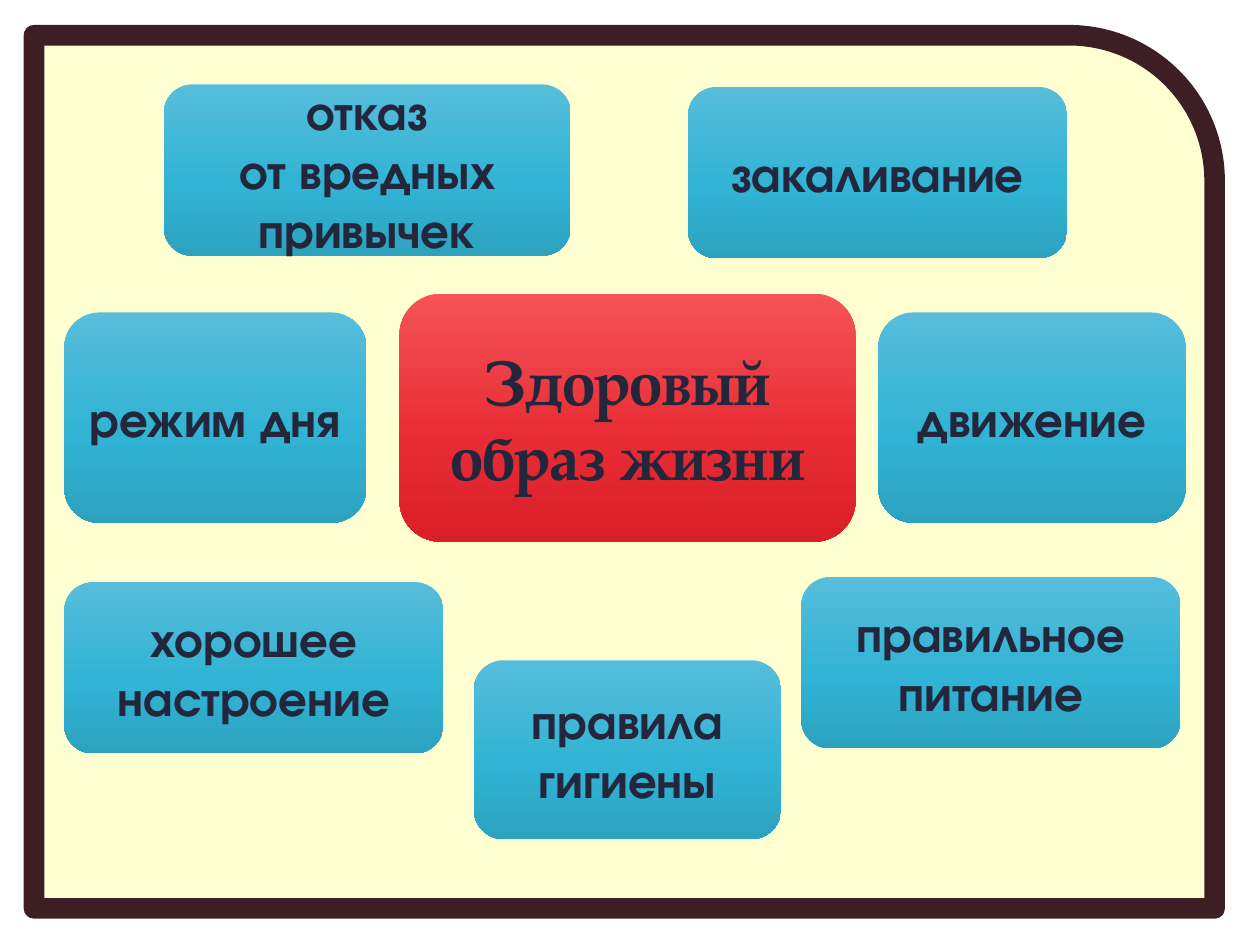
"""Build a slide of healthy lifestyle habits around a central theme."""
from copy import deepcopy

from lxml.etree import SubElement
from pptx import Presentation
from pptx.dml.color import RGBColor
from pptx.enum.shapes import MSO_SHAPE
from pptx.enum.text import MSO_ANCHOR, PP_ALIGN
from pptx.oxml.ns import qn
from pptx.util import Inches, Pt

FRAME = (0.27, 0.28, 9.37, 6.93)
RED = ((0, "F55357"), (0.6, "E72B34"), (1, "DA1F28"))
BLUE = ((0, "57BDDB"), (0.6, "30B3D4"), (1, "2DA2BF"))
THEME_FONT = {"name": "TeX Gyre Pagella", "size": Pt(36), "bold": True}
HABIT_FONT = {"name": "TeX Gyre Adventor", "size": Pt(28), "bold": True}
THEME = ("Здоровый образ жизни", (3.17, 2.33, 3.62, 1.97))
HABITS = [
    ("отказ\nот вредных\nпривычек", (1.3, 0.67, 3.23, 1.36)),
    ("закаливание", (5.46, 0.69, 3.01, 1.36)),
    ("движение", (6.97, 2.48, 2.44, 1.67)),
    ("режим дня", (0.51, 2.48, 2.4, 1.67)),
    ("хорошее настроение", (0.51, 4.62, 3.01, 1.36)),
    ("правильное питание", (6.36, 4.58, 3.01, 1.36)),
    ("правила гигиены", (3.76, 5.24, 2.44, 1.42)),
]


def color(value):
    return RGBColor.from_string(value)


def add_box(page, kind, place):
    box = page.shapes.add_shape(kind, *map(Inches, place))
    box.shadow.inherit = False
    return box


def add_frame(page):
    frame = add_box(page, MSO_SHAPE.ROUND_1_RECTANGLE, FRAME)
    frame.fill.solid()
    frame.fill.fore_color.rgb = color("FFFFCC")
    tint = frame._element.spPr.find(f"{qn('a:solidFill')}/{qn('a:srgbClr')}")
    SubElement(tint, qn("a:alpha"), val="90000")
    frame.line.color.rgb = color("3E1E25")
    frame.line.width = Pt(11.75)


def fill_gradient(box, stops):
    box.fill.gradient()
    box.fill.gradient_angle = 270
    stop_list = box._element.spPr.find(f"{qn('a:gradFill')}/{qn('a:gsLst')}")
    stop_list.append(deepcopy(stop_list[0]))
    for stop, (position, value) in zip(box.fill.gradient_stops, stops):
        stop.position = position
        stop.color.rgb = color(value)


def add_card(page, text, place, stops, font):
    card = add_box(page, MSO_SHAPE.ROUNDED_RECTANGLE, place)
    fill_gradient(card, stops)
    card.line.fill.background()
    frame = card.text_frame
    frame.word_wrap = True
    frame.vertical_anchor = MSO_ANCHOR.MIDDLE
    frame.text = text
    for para in frame.paragraphs:
        para.alignment = PP_ALIGN.CENTER
        for span in para.runs:
            for name, value in font.items():
                setattr(span.font, name, value)
            span.font.color.rgb = color("24263C")


def main():
    deck = Presentation()
    deck.slide_width, deck.slide_height = Inches(10), Inches(7.5)
    page = deck.slides.add_slide(deck.slide_layouts[6])
    add_frame(page)
    add_card(page, *THEME, RED, THEME_FONT)
    for text, place in HABITS:
        add_card(page, text, place, BLUE, HABIT_FONT)
    deck.save("out.pptx")


if __name__ == "__main__":
    main()
